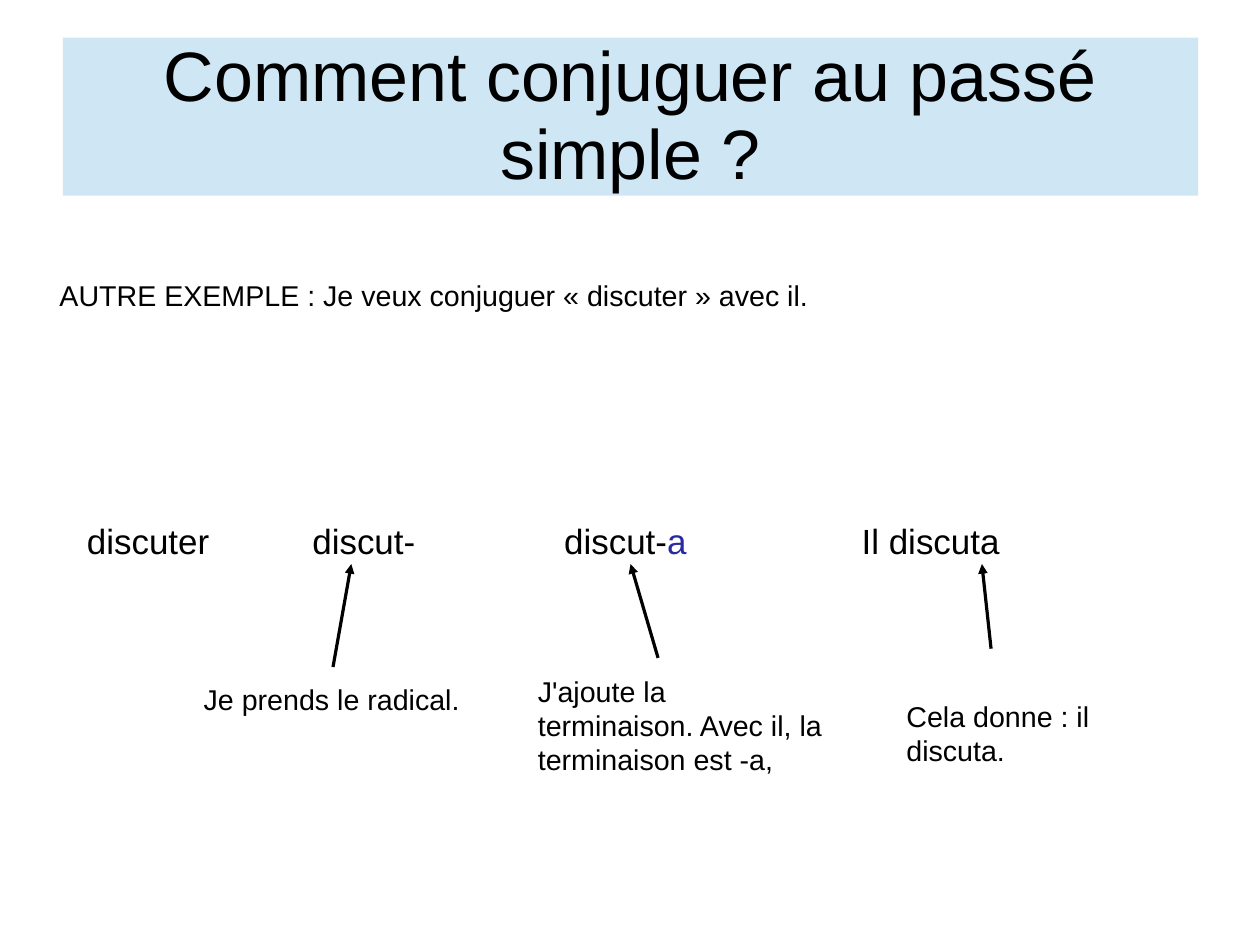
from lxml import etree
from pptx import Presentation
from pptx.dml.color import RGBColor
from pptx.enum.shapes import MSO_CONNECTOR, MSO_SHAPE
from pptx.enum.text import MSO_ANCHOR, PP_ALIGN
from pptx.oxml.ns import qn
from pptx.util import Pt

RECT, STRAIGHT = MSO_SHAPE.RECTANGLE, MSO_CONNECTOR.STRAIGHT
MIDDLE, TOP = MSO_ANCHOR.MIDDLE, MSO_ANCHOR.TOP
CENTER, LEFT = PP_ALIGN.CENTER, PP_ALIGN.LEFT

# Content: lengths in px, 100 px to the inch
PX = 9144
SLIDE_W, SLIDE_H = 1101, 826
FONT = "Arial"
COLORS = {"band": "CFE7F5", "text": "000000", "ending": "2929A3"}
TITLE_SIZE, FORM_SIZE, NOTE_SIZE = 44, 22, 18
FORM_TOP, FORM_H, ARROW_TIP = 449, 45, 493
INSET = 5

TITLE = "Comment conjuguer au passé simple ?"
TITLE_BOX = (55, 33, 992, 138)
EXAMPLE = "AUTRE EXEMPLE : Je veux conjuguer « discuter » avec il."
EXAMPLE_BOX = (47, 238, 976, 38)

# Verb forms: left, width, stem, coloured ending
FORMS = [
    (71, 205, "discuter", ""),
    (268, 205, "discut-", ""),
    (488, 205, "discut-", "a"),
    (748, 276, "Il discuta", ""),
]
# Explanations: box, text, arrow start, arrow tip x
STEPS = [
    ((173, 591, 260, 38), "Je prends le radical.", (291, 583), 307),
    ((465, 584, 260, 97),
     "J'ajoute la terminaison. Avec il, la terminaison est -a,", (575, 575), 551),
    ((787, 606, 228, 67), "Cela donne : il discuta.", (866, 567), 858),
]


def emu(*lengths):
    return [n * PX for n in lengths]


def color(name):
    return RGBColor.from_string(COLORS[name])


def write(sp, text, size, align=LEFT, anchor=TOP, inset=INSET):
    tf = sp.text_frame
    tf.word_wrap = True
    tf.vertical_anchor = anchor
    tf.margin_left = tf.margin_top = tf.margin_right = tf.margin_bottom = inset * PX
    p = tf.paragraphs[0]
    p.alignment = align
    p.font.name, p.font.size = FONT, Pt(size)
    p.font.color.rgb = color("text")
    p.add_run().text = text
    return p


def add_text(slide, box, text, size):
    return write(slide.shapes.add_textbox(*emu(*box)), text, size)


def add_arrow(slide, start, tip):
    line = slide.shapes.add_connector(STRAIGHT, *emu(*start, *tip))
    line.line.color.rgb = color("text")
    line.line.width = Pt(0)  # hairline
    etree.SubElement(line.line._get_or_add_ln(), qn("a:tailEnd"), type="triangle")
    etree.SubElement(line._element.spPr, qn("a:effectLst"))


def main():
    prs = Presentation()
    prs.slide_width, prs.slide_height = emu(SLIDE_W, SLIDE_H)
    slide = prs.slides.add_slide(prs.slide_layouts[6])

    # Title band
    band = slide.shapes.add_shape(RECT, *emu(*TITLE_BOX))
    band.shadow.inherit = False
    band.fill.solid()
    band.fill.fore_color.rgb = color("band")
    band.line.fill.background()
    p = write(band, TITLE, TITLE_SIZE, CENTER, MIDDLE, 0)
    p.line_spacing = 0.93

    # Example sentence
    add_text(slide, EXAMPLE_BOX, EXAMPLE, NOTE_SIZE)

    # Row of verb forms
    for left, width, stem, ending in FORMS:
        p = add_text(slide, (left, FORM_TOP, width, FORM_H), stem, FORM_SIZE)
        if ending:
            r = p.add_run()
            r.text = ending
            r.font.color.rgb = color("ending")

    # Explanations with arrows up to the forms
    for box, text, start, tip_x in STEPS:
        add_arrow(slide, start, (tip_x, ARROW_TIP))
        add_text(slide, box, text, NOTE_SIZE)

    prs.save("out.pptx")


if __name__ == "__main__":
    main()
